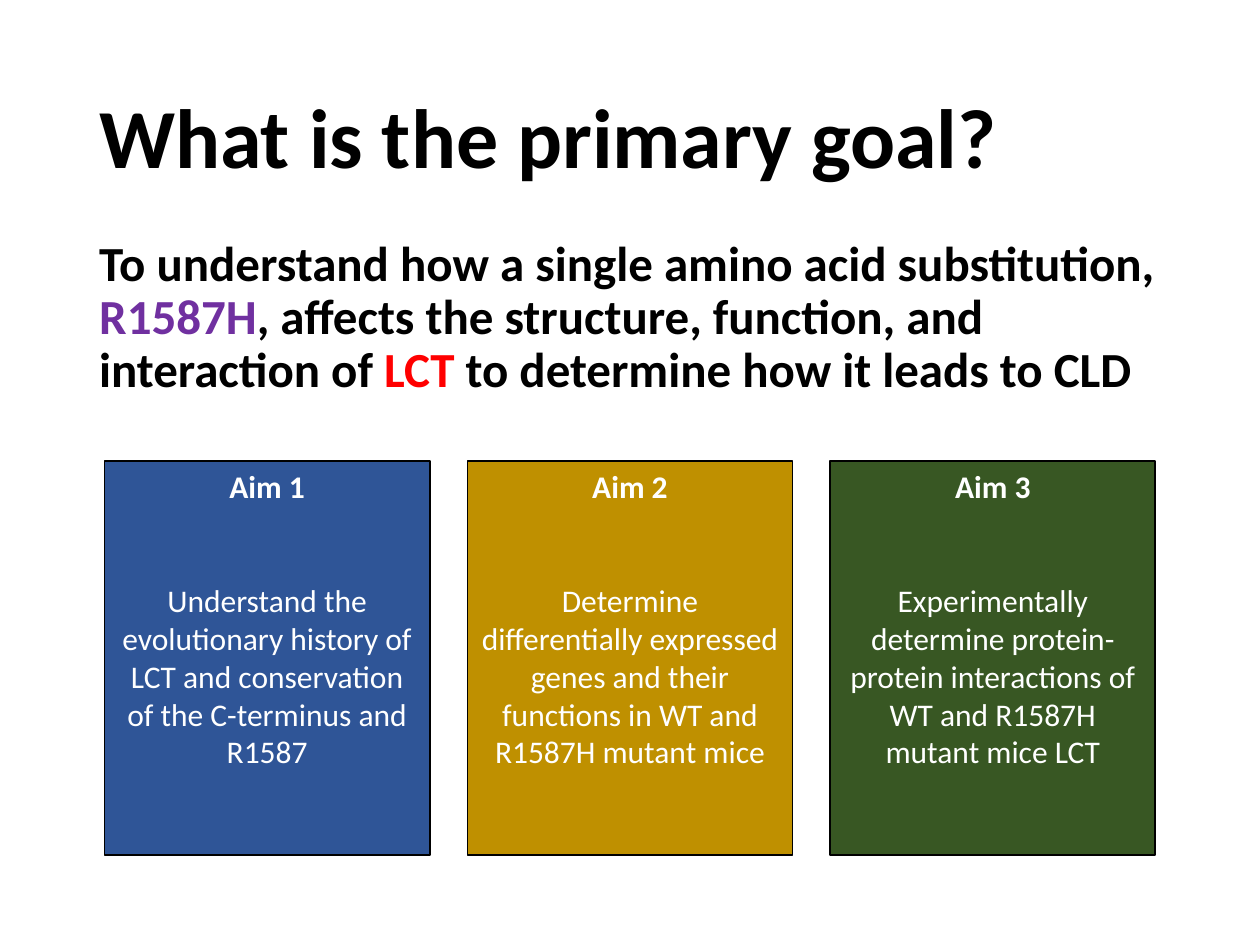
"""Build a slide stating a study's primary goal and its three aims."""
from lxml import etree
from pptx import Presentation
from pptx.dml.color import RGBColor
from pptx.enum.shapes import MSO_SHAPE
from pptx.enum.text import MSO_ANCHOR, MSO_AUTO_SIZE, PP_ALIGN
from pptx.oxml.ns import qn
from pptx.util import Pt

RECTANGLE = MSO_SHAPE.RECTANGLE
TOP, MIDDLE = MSO_ANCHOR.TOP, MSO_ANCHOR.MIDDLE
NO_FIT = MSO_AUTO_SIZE.NONE
LEFT, CENTER = PP_ALIGN.LEFT, PP_ALIGN.CENTER

SLIDE_WIDTH, SLIDE_HEIGHT = 720, 540
AIM_WIDTH, AIM_HEIGHT, AIM_TOP, AIM_GAP = 185.75, 225.25, 263.5, 21.6
COLORS = {
    "black": "000000", "white": "FFFFFF", "purple": "7030A0", "red": "FF0000",
    "blue": "2F5597", "gold": "BF9000", "green": "385723",
}
GOAL = [
    ("To understand how a single amino acid substitution, ", "black"),
    ("R1587H", "purple"),
    (", affects the structure, function, and interaction of ", "black"),
    ("LCT", "red"),
    (" to determine how it leads to CLD", "black"),
]
AIMS = [
    ("Aim 1", "blue", "Understand the evolutionary history of LCT and "
     "conservation of the C-terminus and R1587"),
    ("Aim 2", "gold", "Determine differentially expressed genes and their "
     "functions in WT and R1587H mutant mice"),
    ("Aim 3", "green", "Experimentally determine protein-protein interactions "
     "of WT and R1587H mutant mice LCT"),
]


def rgb(color):
    return RGBColor.from_string(COLORS[color])


def add_run(paragraph, text, color, size, bold=True):
    run = paragraph.add_run()
    run.text = text
    font_format = {"name": "Calibri", "size": Pt(size), "bold": bold}
    for attribute, value in font_format.items():
        setattr(run.font, attribute, value)
    run.font.color.rgb = rgb(color)


deck = Presentation()
deck.slide_width, deck.slide_height = Pt(SLIDE_WIDTH), Pt(SLIDE_HEIGHT)
slide = deck.slides.add_slide(deck.slide_layouts[1])
title, goal = slide.placeholders

for placeholder, top, anchor in [(title, 28.75, MIDDLE), (goal, 133.25, TOP)]:
    place = {"left": 49.5, "top": top, "width": 621, "height": 104.4}
    for attribute, value in place.items():
        setattr(placeholder, attribute, Pt(value))
    frame_format = {"word_wrap": True, "auto_size": NO_FIT, "vertical_anchor": anchor}
    for attribute, value in frame_format.items():
        setattr(placeholder.text_frame, attribute, value)
    paragraph = placeholder.text_frame.paragraphs[0]
    paragraph.alignment = LEFT
    paragraph.line_spacing = 0.9

add_run(title.text_frame.paragraphs[0], "What is the primary goal?", "black", 48)

statement = goal.text_frame.paragraphs[0]
statement.space_before = Pt(10)
statement_properties = statement._p.get_or_add_pPr()
for attribute in ("marL", "indent"):
    statement_properties.set(attribute, "0")
etree.SubElement(statement_properties, qn("a:buNone"))
for text, color in GOAL:
    add_run(statement, text, color, 28)

row_width = len(AIMS) * AIM_WIDTH + (len(AIMS) - 1) * AIM_GAP
row_left = (SLIDE_WIDTH - row_width) / 2
for index, (heading, color, description) in enumerate(AIMS):
    aim_left = row_left + index * (AIM_WIDTH + AIM_GAP)
    aim = slide.shapes.add_shape(
        RECTANGLE, Pt(aim_left), Pt(AIM_TOP), Pt(AIM_WIDTH), Pt(AIM_HEIGHT))
    aim.shadow.inherit = False
    aim.fill.solid()
    aim.fill.fore_color.rgb = rgb(color)
    aim.line.color.rgb = rgb("black")
    aim.line.width = Pt(1)
    aim_text = aim.text_frame
    aim_text.word_wrap = True
    aim_text.vertical_anchor = TOP
    heading_line, description_line = aim_text.paragraphs[0], aim_text.add_paragraph()
    add_run(heading_line, heading, "white", 18)
    add_run(description_line, description, "white", 18, bold=False)
    heading_line.alignment = description_line.alignment = CENTER
    description_line.space_before = Pt(43.5)

deck.save("out.pptx")
